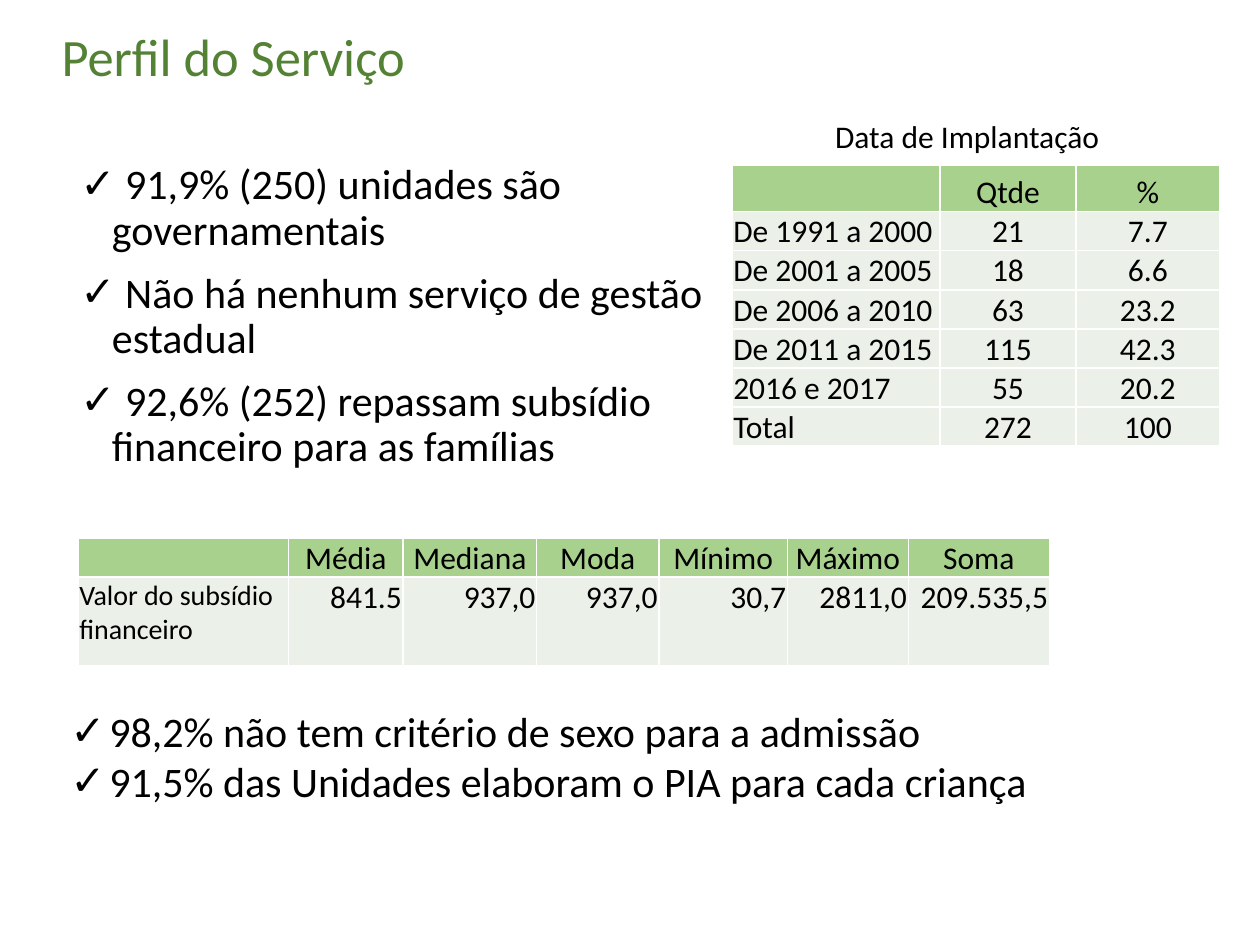
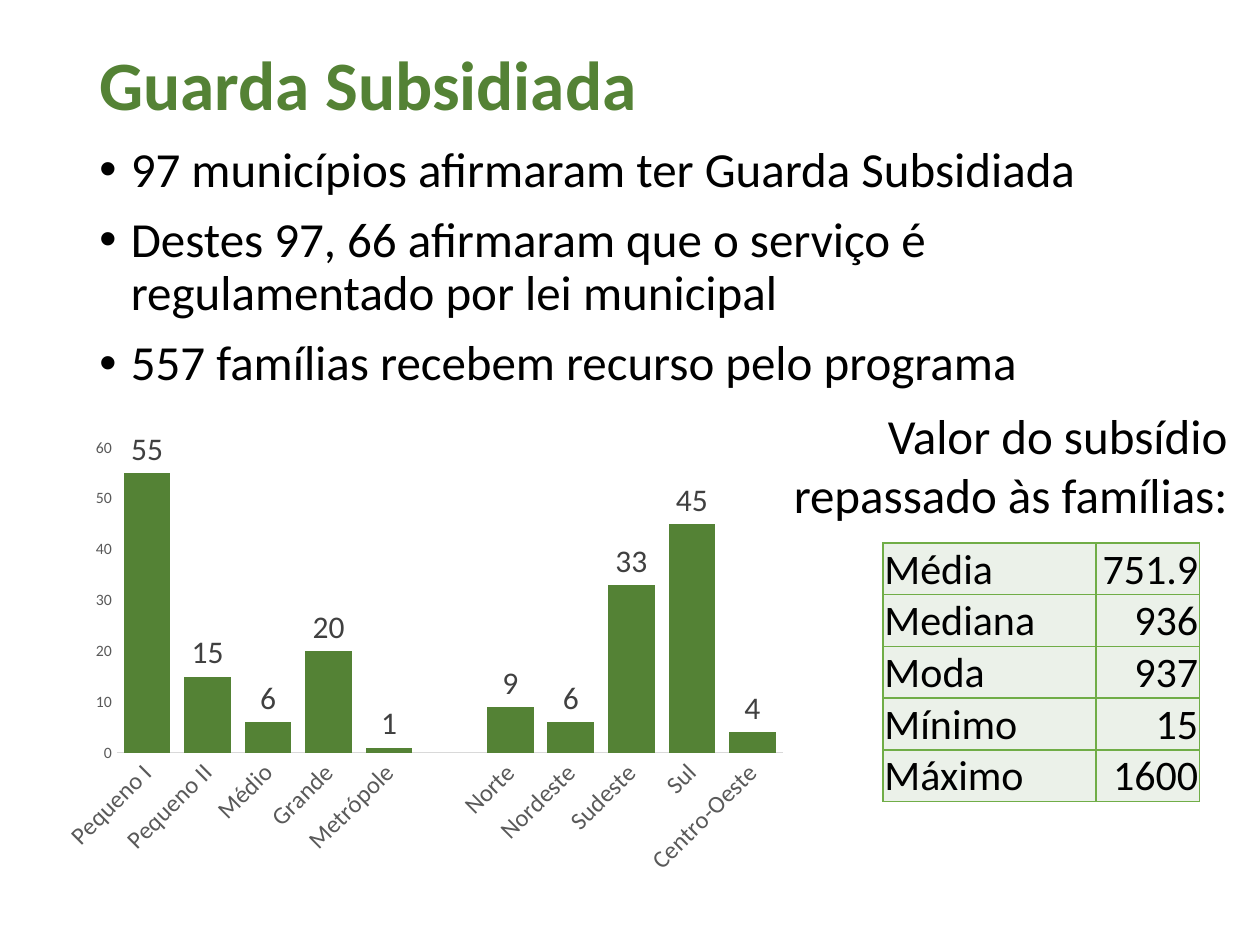
from pptx import Presentation
from pptx.chart.data import CategoryChartData
from pptx.dml.color import RGBColor
from pptx.enum.chart import XL_CHART_TYPE, XL_LABEL_POSITION, XL_TICK_MARK
from pptx.enum.text import MSO_ANCHOR, PP_ALIGN
from pptx.oxml.ns import qn
from pptx.util import Inches, Pt
from lxml.etree import SubElement

FONT = "Calibri"
GREEN = RGBColor(0x54, 0x82, 0x35)
HEAD = RGBColor(0xA9, 0xD1, 0x8E)
PALE = RGBColor(0xEB, 0xF1, 0xE9)
EDGE = RGBColor(0x70, 0xAD, 0x47)
WHITE = RGBColor(0xFF, 0xFF, 0xFF)
BLACK = RGBColor(0, 0, 0)
GREY = RGBColor(0x59, 0x59, 0x59)
DARK = RGBColor(0x40, 0x40, 0x40)
RULE = RGBColor(0xD9, 0xD9, 0xD9)
LEFT, MID, RIGHT = PP_ALIGN.LEFT, PP_ALIGN.CENTER, PP_ALIGN.RIGHT
TOP, CENTRE, LOW = MSO_ANCHOR.TOP, MSO_ANCHOR.MIDDLE, MSO_ANCHOR.BOTTOM

PROFILE = [
    " 91,9% (250) unidades são governamentais",
    " Não há nenhum serviço de gestão estadual",
    " 92,6% (252) repassam subsídio financeiro para as famílias",
]
CRITERIA = [
    "98,2% não tem critério de sexo para a admissão",
    "91,5% das Unidades elaboram o PIA para cada criança",
]
DATES = [
    ("", "Qtde", "%"),
    ("De 1991 a 2000", "21", "7.7"),
    ("De 2001 a 2005", "18", "6.6"),
    ("De 2006 a 2010", "63", "23.2"),
    ("De 2011 a 2015", "115", "42.3"),
    ("2016 e 2017", "55", "20.2"),
    ("Total", "272", "100"),
]
SUBSIDY = [
    ("", "Média", "Mediana", "Moda", "Mínimo", "Máximo", "Soma"),
    ("Valor do subsídio financeiro", "841.5", "937,0", "937,0", "30,7",
     "2811,0", "209.535,5"),
]
CUSTODY = [
    "97 municípios afirmaram ter Guarda Subsidiada",
    "Destes 97, 66 afirmaram que o serviço é regulamentado por lei municipal",
    "557 famílias recebem recurso pelo programa",
]
AMOUNTS = [("Média", "751.9"), ("Mediana", "936"), ("Moda", "937"),
           ("Mínimo", "15"), ("Máximo", "1600")]
TOWNS = [("Pequeno I", 55), ("Pequeno II", 15), ("Médio", 6), ("Grande", 20),
         ("Metrópole", 1), ("", None), ("Norte", 9), ("Nordeste", 6),
         ("Sudeste", 33), ("Sul", 45), ("Centro-Oeste", 4)]


def style(font, size, color=BLACK, bold=False):
    font.name, font.size, font.bold = FONT, Pt(size), bold
    font.color.rgb = color


def write(para, text, size, color=BLACK, bold=False):
    run = para.add_run()
    run.text = text
    style(run.font, size, color, bold)


def add_text(slide, box, lines, size, color=BLACK, bold=False, align=LEFT,
             anchor=TOP, mark=None, indent=0.25, space=0, lead=None):
    frame = slide.shapes.add_textbox(*map(Inches, box)).text_frame
    frame.word_wrap, frame.vertical_anchor = True, anchor
    for i, line in enumerate(lines):
        para = frame.add_paragraph() if i else frame.paragraphs[0]
        para.alignment = align
        if lead:
            para.line_spacing = lead
        if i and space:
            para.space_before = Pt(space)
        if mark:
            props = para._p.get_or_add_pPr()
            props.set("marL", str(Inches(indent)))
            props.set("indent", str(-Inches(indent)))
            SubElement(props, qn("a:buFont"), typeface="Arial")
            SubElement(props, qn("a:buChar"), char=mark)
        write(para, line, size, color, bold)


def add_edges(cell, color):
    props = cell._tc.get_or_add_tcPr()
    for side in "LRTB":
        line = SubElement(props, qn("a:ln" + side), w=str(Pt(1)))
        fill = SubElement(line, qn("a:solidFill"))
        SubElement(fill, qn("a:srgbClr"), val=str(color))


def add_grid(slide, spot, cols, rows, data, look, edge):
    box = (*spot, sum(cols), sum(rows))
    grid = slide.shapes.add_table(len(rows), len(cols), *map(Inches, box)).table
    grid.first_row = grid.horz_banding = False
    for col, width in zip(grid.columns, cols):
        col.width = Inches(width)
    for r, line in enumerate(data):
        grid.rows[r].height = Inches(rows[r])
        for c, text in enumerate(line):
            cell = grid.cell(r, c)
            size, align, anchor, fill = look(r, c)
            add_edges(cell, edge)
            cell.fill.solid()
            cell.fill.fore_color.rgb = fill
            cell.vertical_anchor = anchor
            cell.margin_left = cell.margin_right = cell.margin_top = Inches(0.01)
            cell.margin_bottom = 0
            para = cell.text_frame.paragraphs[0]
            para.alignment = align
            if text:
                write(para, text, size)


def date_look(r, c):
    if r == 0:
        return 18, MID, LOW, HEAD
    return (18, MID, CENTRE, PALE) if c else (18, LEFT, LOW, PALE)


def sum_look(r, c):
    if r == 0:
        return 18, MID, LOW, HEAD
    return (18, RIGHT, TOP, PALE) if c else (16, LEFT, TOP, PALE)


def pay_look(r, c):
    return 24, RIGHT if c else LEFT, LOW, PALE


def add_bars(slide, box):
    data = CategoryChartData(number_format="###0")
    data.categories = [name for name, count in TOWNS]
    data.add_series("Series 1", [count for name, count in TOWNS])
    chart = slide.shapes.add_chart(
        XL_CHART_TYPE.COLUMN_CLUSTERED, *map(Inches, box), data).chart
    chart.has_legend = chart.has_title = False
    style(chart.font, 10)
    cats, vals = chart.category_axis, chart.value_axis
    for axis, size in ((cats, 14), (vals, 9)):
        axis.has_major_gridlines = False
        axis.major_tick_mark = axis.minor_tick_mark = XL_TICK_MARK.NONE
        style(axis.tick_labels.font, size, GREY)
    cats.format.line.color.rgb = RULE
    cats.format.line.width = Pt(0.75)
    cats._element.txPr.find(qn("a:bodyPr")).set("rot", "-2700000")
    vals.format.line.fill.background()
    vals.minimum_scale, vals.maximum_scale, vals.major_unit = 0, 60, 10
    plot = chart.plots[0]
    plot.gap_width, plot.overlap, plot.vary_by_categories = 30, -27, False
    fill = plot.series[0].format.fill
    fill.solid()
    fill.fore_color.rgb = GREEN
    plot.has_data_labels = True
    tags = plot.data_labels
    tags.show_value, tags.position = True, XL_LABEL_POSITION.OUTSIDE_END
    tags.number_format, tags.number_format_is_linked = "###0", False
    style(tags.font, 18, DARK)


def main():
    deck = Presentation()
    deck.slide_width, deck.slide_height = Inches(10), Inches(7.5)
    blank = deck.slide_layouts[6]

    slide = deck.slides.add_slide(blank)
    add_text(slide, (0.54, 1.25, 6.08, 4.76), PROFILE, 24,
             mark="✓", space=10, lead=0.9)
    add_text(slide, (0.39, 0.14, 8.52, 0.61), ["Perfil do Serviço"], 30, GREEN)
    add_grid(slide, (5.81, 1.31), [1.65, 1.08, 1.14], [0.37] + [0.31] * 6,
             DATES, date_look, WHITE)
    add_grid(slide, (0.62, 4.27), [1.67, 0.91, 1.06, 0.97, 1.02, 0.96, 1.12],
             [0.31, 0.7], SUBSIDY, sum_look, WHITE)
    add_text(slide, (6.53, 0.88, 2.9, 0.4), ["Data de Implantação"], 18)
    add_text(slide, (0.46, 5.55, 7.86, 0.91), CRITERIA, 24,
             mark="✓", indent=0.31)

    slide = deck.slides.add_slide(blank)
    add_text(slide, (0.69, 0.4, 8.62, 0.6), ["Guarda Subsidiada"], 39.6, GREEN,
             bold=True, anchor=CENTRE, lead=0.9)
    add_text(slide, (0.69, 1.1, 8.62, 4.92), CUSTODY, 28,
             mark="•", space=10, lead=0.9)
    add_grid(slide, (7.01, 4.31), [1.69, 0.82], [0.41] * 5,
             AMOUNTS, pay_look, EDGE)
    add_text(slide, (5.88, 3.17, 3.96, 1.04),
             ["Valor do subsídio repassado às famílias:"], 28, align=RIGHT)
    add_bars(slide, (0.39, 3.41, 5.94, 3.61))
    deck.save("out.pptx")


if __name__ == "__main__":
    main()
